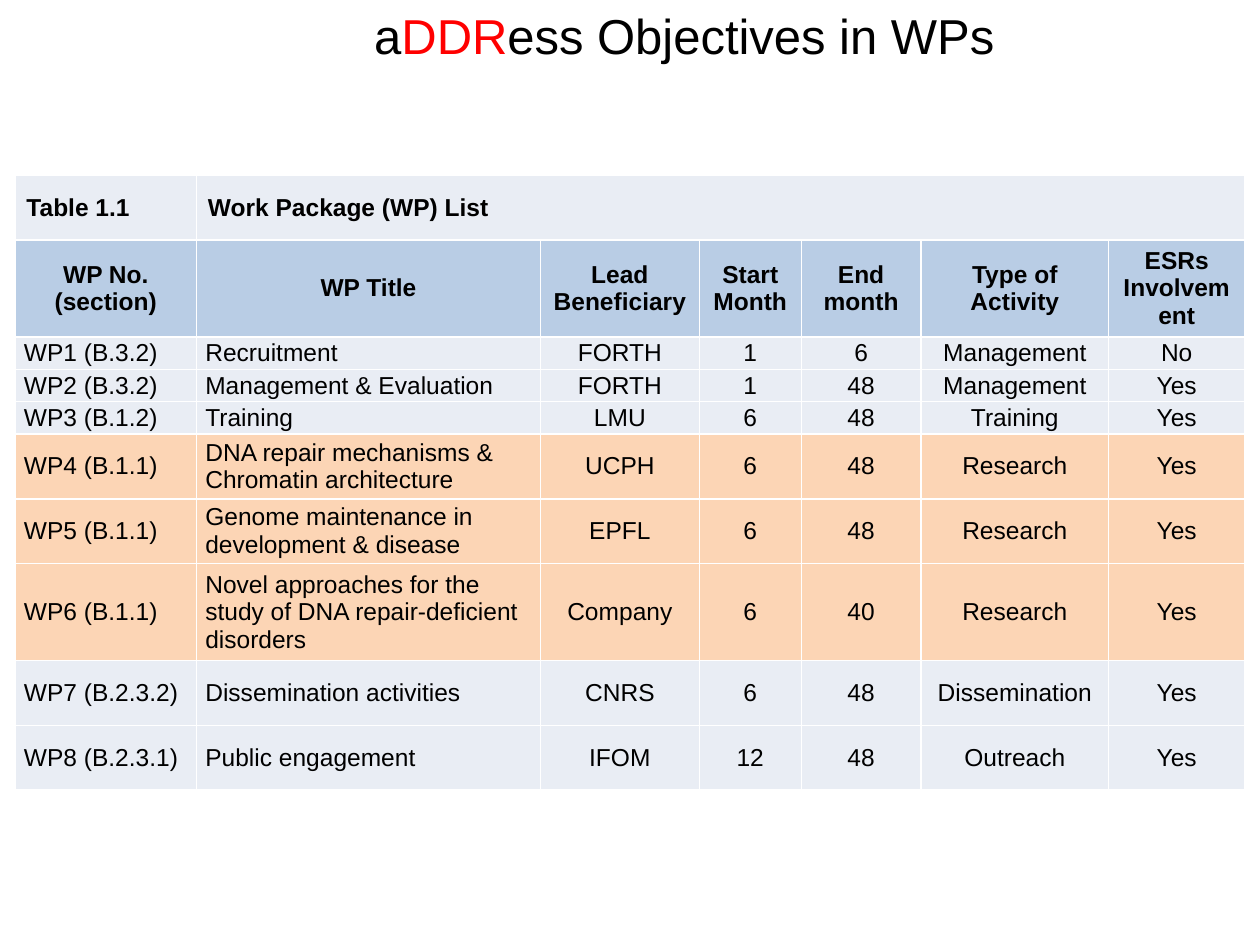
from lxml.etree import SubElement
from pptx import Presentation
from pptx.dml.color import RGBColor
from pptx.enum.text import MSO_ANCHOR, MSO_AUTO_SIZE, PP_ALIGN
from pptx.oxml.ns import qn
from pptx.util import Inches, Pt

COLORS = {
    "text": "000000",
    "accent": "FF0000",
    "border": "FFFFFF",
    "plain": "E9EDF4",
    "header": "B9CDE5",
    "research": "FCD5B5",
}
FONT = "Arial"
TITLE_PARTS = [("a", "text"), ("DDR", "accent"), ("ess Objectives in WPs", "text")]
COLUMN_WIDTHS = [1.44, 2.73, 1.26, 0.81, 0.95, 1.49, 1.08]
LINE_UNIT = 0.257
ROW_UNITS = [2, 3, 1, 1, 1, 2, 2, 3, 2, 2]
CAPTION = ["Table 1.1", "Work Package (WP) List"]
HEADINGS = ["WP No. (section)", "WP Title", "Lead Beneficiary", "Start Month",
            "End month", "Type of Activity", "ESRs Involvement"]
WORK_PACKAGES = [
    ["WP1 (B.3.2)", "Recruitment", "FORTH", "1", "6", "Management", "No"],
    ["WP2 (B.3.2)", "Management & Evaluation", "FORTH", "1", "48", "Management", "Yes"],
    ["WP3 (B.1.2)", "Training", "LMU", "6", "48", "Training", "Yes"],
    ["WP4 (B.1.1)", "DNA repair mechanisms & Chromatin architecture",
     "UCPH", "6", "48", "Research", "Yes"],
    ["WP5 (B.1.1)", "Genome maintenance in development & disease",
     "EPFL", "6", "48", "Research", "Yes"],
    ["WP6 (B.1.1)", "Novel approaches for the study of DNA repair-deficient disorders",
     "Company", "6", "40", "Research", "Yes"],
    ["WP7 (B.2.3.2)", "Dissemination activities", "CNRS", "6", "48", "Dissemination", "Yes"],
    ["WP8 (B.2.3.1)", "Public engagement", "IFOM", "12", "48", "Outreach", "Yes"],
]


def rgb(name):
    return RGBColor.from_string(COLORS[name])


def format_font(font, size, color, bold=False):
    font.name = FONT
    font.size = Pt(size)
    font.bold = bold
    font.color.rgb = rgb(color)


def add_title(slide):
    title = slide.shapes.title
    title.left, title.top = Inches(2.87), Inches(-0.01)
    title.width, title.height = Inches(5.18), Inches(0.57)
    frame = title.text_frame
    frame.word_wrap = False
    frame.auto_size = MSO_AUTO_SIZE.SHAPE_TO_FIT_TEXT
    frame.vertical_anchor = MSO_ANCHOR.TOP
    paragraph = frame.paragraphs[0]
    paragraph.alignment = PP_ALIGN.LEFT
    for words, color in TITLE_PARTS:
        run = paragraph.add_run()
        run.text = words
        format_font(run.font, 28, color)


def add_borders(cell):
    properties = cell._tc.get_or_add_tcPr()
    for side in ("lnL", "lnR", "lnT", "lnB"):
        line = SubElement(properties, qn(f"a:{side}"), w=str(Pt(1)))
        fill = SubElement(line, qn("a:solidFill"))
        SubElement(fill, qn("a:srgbClr"), val=COLORS["border"])


def style_cell(cell, fill):
    add_borders(cell)
    cell.fill.solid()
    cell.fill.fore_color.rgb = rgb(fill)
    cell.vertical_anchor = MSO_ANCHOR.MIDDLE
    cell.margin_left = cell.margin_right = Inches(0.07)
    cell.margin_top = cell.margin_bottom = 0


def write_cell(cell, words, centered=False, bold=False, indent=0):
    paragraph = cell.text_frame.paragraphs[0]
    paragraph.text = words
    paragraph.alignment = PP_ALIGN.CENTER if centered else PP_ALIGN.LEFT
    if indent:
        paragraph._p.get_or_add_pPr().set("marL", str(Inches(indent)))
    format_font(paragraph.runs[0].font, 14, "text", bold)


def row_fill(row):
    if row == HEADINGS:
        return "header"
    return "research" if "Research" in row else "plain"


def add_package_table(slide):
    rows = [CAPTION, HEADINGS] + WORK_PACKAGES
    table = slide.shapes.add_table(
        len(rows), len(COLUMN_WIDTHS), Inches(0.12), Inches(1.39),
        Inches(sum(COLUMN_WIDTHS)), Inches(sum(ROW_UNITS) * LINE_UNIT)).table
    table.first_row = table.horz_banding = False
    for column, width in zip(table.columns, COLUMN_WIDTHS):
        column.width = Inches(width)
    for table_row, units, row in zip(table.rows, ROW_UNITS, rows):
        table_row.height = Inches(units * LINE_UNIT)
        for cell in table_row.cells:
            style_cell(cell, row_fill(row))
        for index, (cell, words) in enumerate(zip(table_row.cells, row)):
            write_cell(cell, words,
                       centered=row == HEADINGS or index > 1,
                       bold=row in (CAPTION, HEADINGS),
                       indent=0.02 if row == CAPTION else 0)
    table.cell(0, 1).merge(table.cell(0, len(COLUMN_WIDTHS) - 1))


def main():
    deck = Presentation()
    deck.slide_width, deck.slide_height = Inches(10), Inches(7.5)
    slide = deck.slides.add_slide(deck.slide_layouts[5])
    add_title(slide)
    add_package_table(slide)
    deck.save("out.pptx")


if __name__ == "__main__":
    main()
